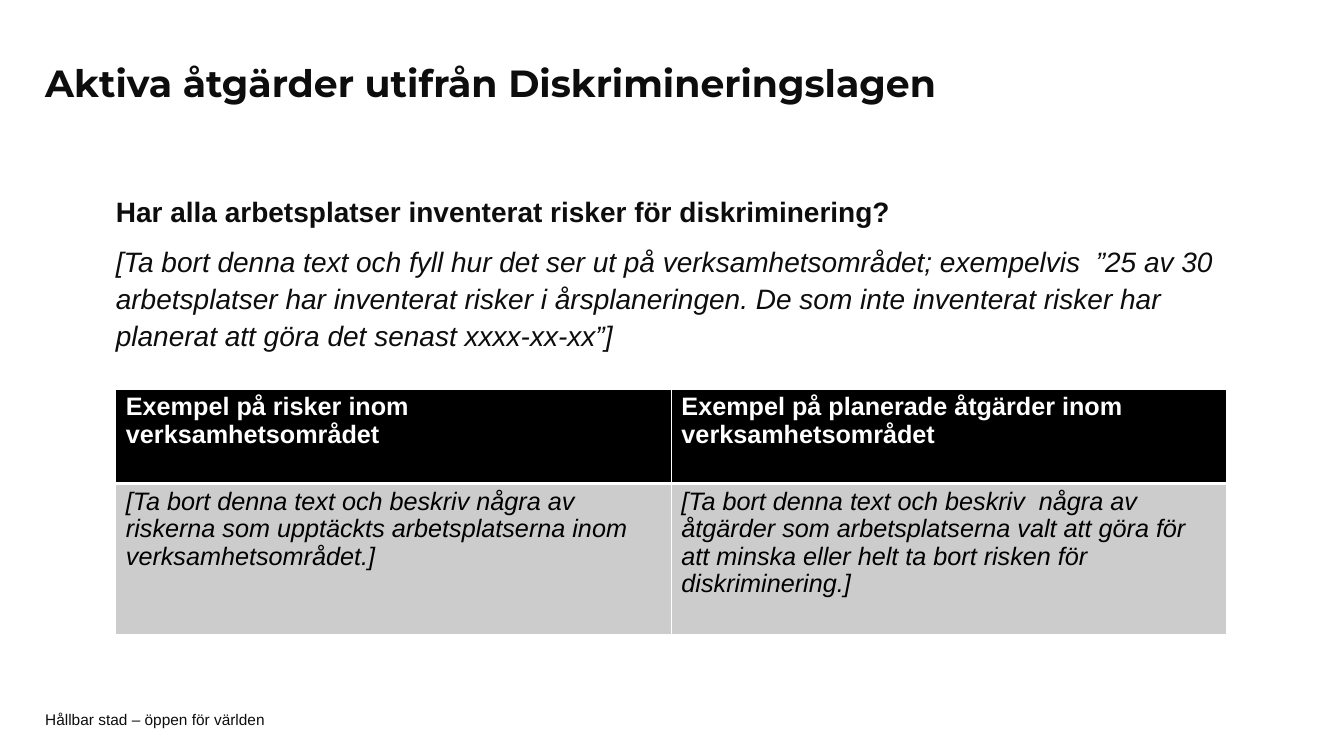
from lxml import etree
from pptx import Presentation
from pptx import util as u
from pptx.dml.color import RGBColor
from pptx.enum import text
from pptx.oxml.ns import qn

COLORS = {"ink": "0D0D0D", "black": "000000", "white": "FFFFFF", "grey": "CCCCCC"}

TITLE = "Aktiva åtgärder utifrån Diskrimineringslagen"
FOOTER = "Hållbar stad – öppen för världen"
QUESTION = "Har alla arbetsplatser inventerat risker för diskriminering?"
ANSWER = (
    "[Ta bort denna text och fyll hur det ser ut på verksamhetsområdet; exempelvis  ”25 av 30 "
    "arbetsplatser har inventerat risker i årsplaneringen. De som inte inventerat risker har "
    "planerat att göra det senast xxxx-xx-xx”]"
)
TABLE_ROWS = [
    (
        "Exempel på risker inom verksamhetsområdet",
        "Exempel på planerade åtgärder inom verksamhetsområdet",
    ),
    (
        "[Ta bort denna text och beskriv några av riskerna som upptäckts arbetsplatserna "
        "inom verksamhetsområdet.]",
        "[Ta bort denna text och beskriv  några av åtgärder som arbetsplatserna valt att göra "
        "för att minska eller helt ta bort risken för diskriminering.]",
    ),
]
ROW_STYLES = [
    {"height": 2.38, "fill": "black", "color": "white", "bold": True, "italic": False, "bottom": 3},
    {"height": 3.8, "fill": "grey", "color": "black", "bold": False, "italic": True, "bottom": 1},
]
MARGIN = 1.14
CONTENT_LEFT = 2.92
CONTENT_WIDTH = 28


def rgb(name):
    return RGBColor.from_string(COLORS[name])


def add_run(paragraph, words, size, color="ink", font="Arial", bold=False, italic=False):
    run = paragraph.add_run()
    run.text = words
    run.font.name = font
    run.font.size = u.Pt(size)
    run.font.bold = bold
    run.font.italic = italic
    run.font.color.rgb = rgb(color)


def add_box(slide, left, top, width, height, anchor, inset=0):
    box = slide.shapes.add_textbox(u.Cm(left), u.Cm(top), u.Cm(width), u.Cm(height))
    frame = box.text_frame
    frame.word_wrap = True
    frame.vertical_anchor = anchor
    frame.margin_left = frame.margin_right = 0
    frame.margin_top = frame.margin_bottom = u.Cm(inset)
    return frame


def set_borders(cell, widths):
    properties = cell._tc.get_or_add_tcPr()
    for index, (side, width) in enumerate(widths.items()):
        line = etree.Element(qn(f"a:{side}"), w=str(u.Pt(width)))
        fill = etree.SubElement(line, qn("a:solidFill"))
        etree.SubElement(fill, qn("a:srgbClr"), val=COLORS["white"])
        properties.insert(index, line)


def add_risk_table(slide):
    height = sum(style["height"] for style in ROW_STYLES)
    columns = len(TABLE_ROWS[0])
    table = slide.shapes.add_table(
        len(TABLE_ROWS), columns,
        u.Cm(CONTENT_LEFT), u.Cm(9.8), u.Cm(CONTENT_WIDTH), u.Cm(height),
    ).table
    for column in table.columns:
        column.width = u.Cm(CONTENT_WIDTH / columns)
    top = 1
    for row, words_in_row, style in zip(table.rows, TABLE_ROWS, ROW_STYLES):
        row.height = u.Cm(style["height"])
        for cell, words in zip(row.cells, words_in_row):
            cell.fill.solid()
            cell.fill.fore_color.rgb = rgb(style["fill"])
            paragraph = cell.text_frame.paragraphs[0]
            paragraph.line_spacing = 0.97
            add_run(paragraph, words, 18, style["color"],
                    bold=style["bold"], italic=style["italic"])
            set_borders(cell, {"lnL": 1, "lnR": 1, "lnT": top, "lnB": style["bottom"]})
        top = style["bottom"]


def main():
    presentation = Presentation()
    presentation.slide_width = u.Cm(33.87)
    presentation.slide_height = u.Cm(19.05)
    slide = presentation.slides.add_slide(presentation.slide_layouts[6])

    footer = add_box(slide, MARGIN, 17.93, 24, 0.41, text.MSO_ANCHOR.MIDDLE)
    add_run(footer.paragraphs[0], FOOTER, 11)

    title = add_box(slide, MARGIN, 1.12, 25.48, 2.06, text.MSO_ANCHOR.MIDDLE, 0.13)
    title.paragraphs[0].line_spacing = 0.9
    add_run(title.paragraphs[0], TITLE, 27, font="Montserrat", bold=True)

    body = add_box(slide, CONTENT_LEFT, 4.83, CONTENT_WIDTH, 4.39, text.MSO_ANCHOR.TOP)
    question = body.paragraphs[0]
    answer = body.add_paragraph()
    answer.space_before = u.Pt(6)
    for paragraph in (question, answer):
        paragraph.line_spacing = 1.1
        paragraph.space_after = u.Pt(3)
    add_run(question, QUESTION, 20, bold=True)
    add_run(answer, ANSWER, 20, italic=True)

    add_risk_table(slide)
    presentation.save("out.pptx")


if __name__ == "__main__":
    main()
